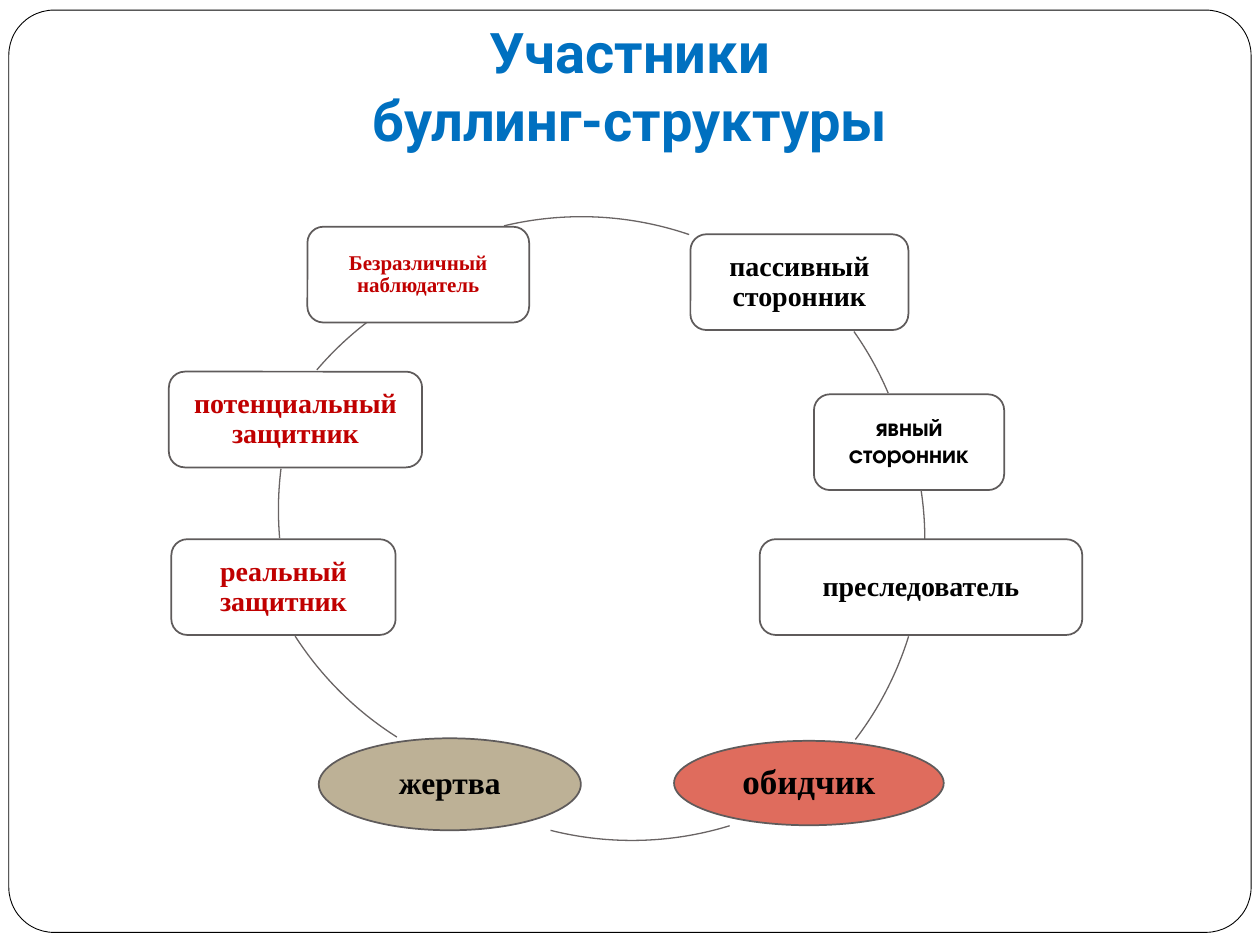
from dataclasses import dataclass
from math import atan2, degrees

from pptx import Presentation
from pptx.dml.color import RGBColor
from pptx.enum.shapes import MSO_SHAPE
from pptx.enum.text import MSO_ANCHOR, MSO_AUTO_SIZE, PP_ALIGN
from pptx.util import Inches, Pt

ROUNDED = MSO_SHAPE.ROUNDED_RECTANGLE
OVAL = MSO_SHAPE.OVAL
ARC = MSO_SHAPE.ARC
CENTER = PP_ALIGN.CENTER
MIDDLE = MSO_ANCHOR.MIDDLE
BOTTOM = MSO_ANCHOR.BOTTOM
NO_AUTOFIT = MSO_AUTO_SIZE.NONE

WHITE = RGBColor(0xFF, 0xFF, 0xFF)
BLACK = RGBColor(0x00, 0x00, 0x00)
BLUE = RGBColor(0x00, 0x70, 0xC0)
RED = RGBColor(0xC0, 0x00, 0x00)
CORAL = RGBColor(0xDF, 0x6C, 0x5D)
SAND = RGBColor(0xBD, 0xB1, 0x96)
OUTLINE = RGBColor(0x5F, 0x5B, 0x5B)
ARC_GRAY = RGBColor(0x69, 0x64, 0x64)

SERIF = "Times New Roman"
GEOMETRIC = "TeX Gyre Adventor"
TITLE_FONT = "Roboto"
DIAMETER = 5.29
BOX_HEIGHT = 0.76


@dataclass
class Role:
    text: str
    left: float
    top: float
    width: float
    height: float = BOX_HEIGHT
    size: int = 16
    inset: float = 0.07
    color: RGBColor = BLACK
    fill: RGBColor = WHITE
    font: str = SERIF
    kind: int = ROUNDED


@dataclass
class Link:
    left: float
    top: float
    start: tuple[float, float]
    end: tuple[float, float]


ROLES = [
    Role("явный сторонник", 6.46, 3.13, 1.51, size=14, inset=0.06, font=GEOMETRIC),
    Role("преследователь", 6.03, 4.28, 2.56),
    Role("обидчик", 5.35, 5.88, 2.14, 0.67, size=20, inset=0.08, fill=CORAL, kind=OVAL),
    Role("жертва", 2.53, 5.86, 2.08, 0.73, size=18, fill=SAND, kind=OVAL),
    Role("реальный защитник", 1.36, 4.28, 1.78, color=RED),
    Role("потенциальный защитник", 1.34, 2.95, 2.01, color=RED),
    Role("Безразличный наблюдатель", 2.44, 1.8, 1.76, size=12, inset=0.05, color=RED),
    Role("пассивный сторонник", 5.48, 1.86, 1.73),
]

LINKS = [
    Link(2.05, 1.64, (7.31, 3.89), (7.34, 4.28)),
    Link(2.04, 1.62, (7.21, 5.05), (6.79, 5.87)),
    Link(2.37, 1.38, (5.79, 6.55), (4.37, 6.59)),
    Link(1.92, 0.97, (3.15, 5.85), (2.34, 5.05)),
    Link(2.21, 1.4, (2.22, 4.27), (2.23, 3.72)),
    Link(1.88, 2.01, (2.52, 2.94), (2.92, 2.56)),
    Link(1.97, 1.72, (4, 1.79), (5.47, 1.86)),
    Link(1.97, 1.51, (6.78, 2.63), (7.05, 3.12)),
]


def write_text(sp, text: str, *, size: int, font: str, color: RGBColor,
               insets: tuple[float, float, float, float],
               anchor=MIDDLE, spacing: float = 0.9) -> None:
    tf = sp.text_frame
    tf.word_wrap = True
    tf.auto_size = NO_AUTOFIT
    tf.vertical_anchor = anchor
    tf.margin_left, tf.margin_top, tf.margin_right, tf.margin_bottom = map(Inches, insets)
    p = tf.paragraphs[0]
    p.text = text
    p.alignment = CENTER
    p.line_spacing = spacing
    for r in p.runs:
        r.font.size = Pt(size)
        r.font.name = font
        r.font.bold = True
        r.font.color.rgb = color


def add_outlined(slide, kind, left: float, top: float, width: float, height: float,
                 line: RGBColor, weight: float, fill: RGBColor | None = None):
    sp = slide.shapes.add_shape(kind, Inches(left), Inches(top), Inches(width), Inches(height))
    sp.shadow.inherit = False
    if fill is None:
        sp.fill.background()
    else:
        sp.fill.solid()
        sp.fill.fore_color.rgb = fill
    sp.line.color.rgb = line
    sp.line.width = Pt(weight)
    return sp


def add_role(slide, role: Role) -> None:
    sp = add_outlined(slide, role.kind, role.left, role.top, role.width, role.height,
                      OUTLINE, 1, role.fill)
    write_text(sp, role.text, size=role.size, font=role.font, color=role.color,
               insets=(role.inset,) * 4)


def add_link(slide, link: Link) -> None:
    sp = add_outlined(slide, ARC, link.left, link.top, DIAMETER, DIAMETER, ARC_GRAY, 0.75)
    cx, cy = link.left + DIAMETER / 2, link.top + DIAMETER / 2
    for i, (x, y) in enumerate((link.start, link.end)):
        angle = degrees(atan2(y - cy, x - cx)) % 360
        sp.adjustments[i] = angle * 0.6


def add_frame(slide) -> None:
    sp = add_outlined(slide, ROUNDED, 0.07, 0.08, 9.86, 7.32, BLACK, 0.5, WHITE)
    sp.adjustments[0] = 0.049
    slide.shapes._spTree.insert(2, sp._element)


def add_title(slide) -> None:
    sp = slide.shapes.title
    sp.left, sp.top, sp.width, sp.height = map(Inches, (0.5, 0.3, 9, 1.01))
    write_text(sp, "Участники\vбуллинг-структуры", size=32, font=TITLE_FONT, color=BLUE,
               insets=(0.1, 0.05, 0.1, 0.1), anchor=BOTTOM, spacing=1.0)


def main() -> None:
    prs = Presentation()
    prs.slide_width, prs.slide_height = Inches(10), Inches(7.5)
    slide = prs.slides.add_slide(prs.slide_layouts[5])
    add_frame(slide)
    add_title(slide)
    for role, link in zip(ROLES, LINKS):
        add_role(slide, role)
        add_link(slide, link)
    prs.save("out.pptx")


if __name__ == "__main__":
    main()
